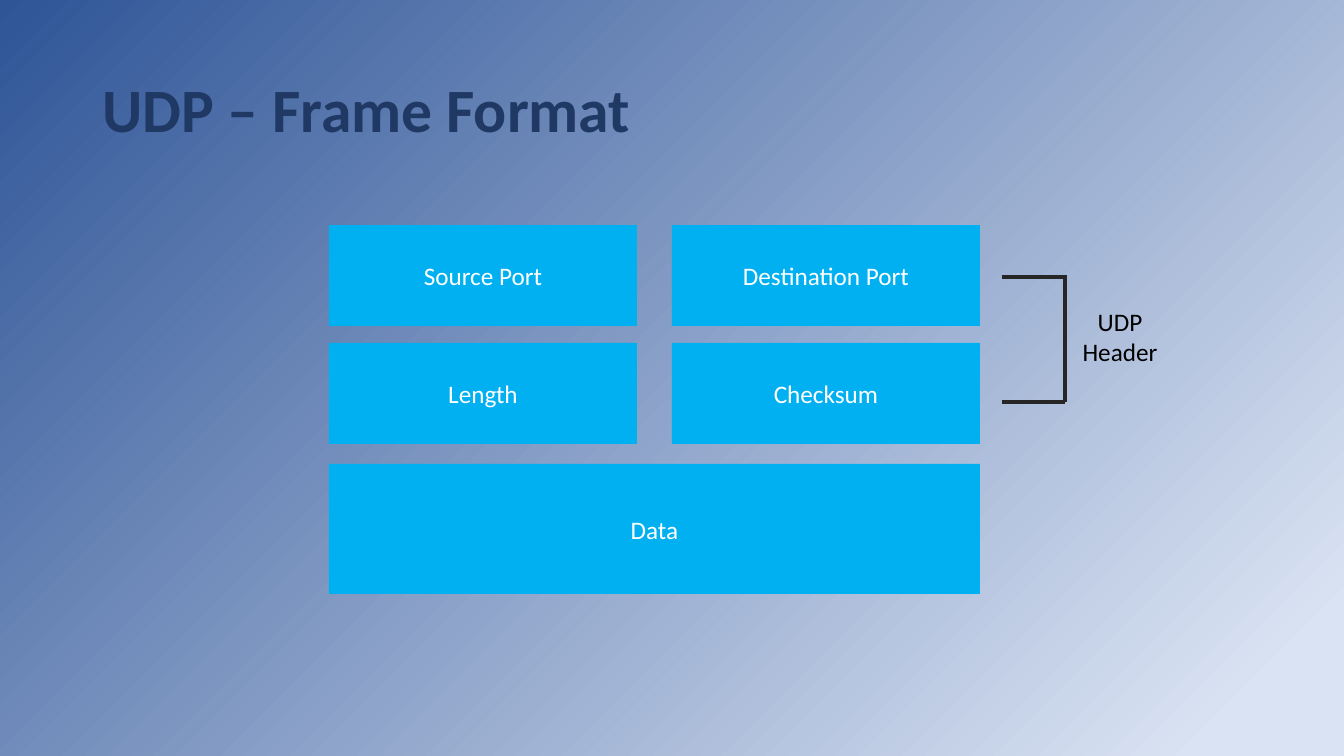
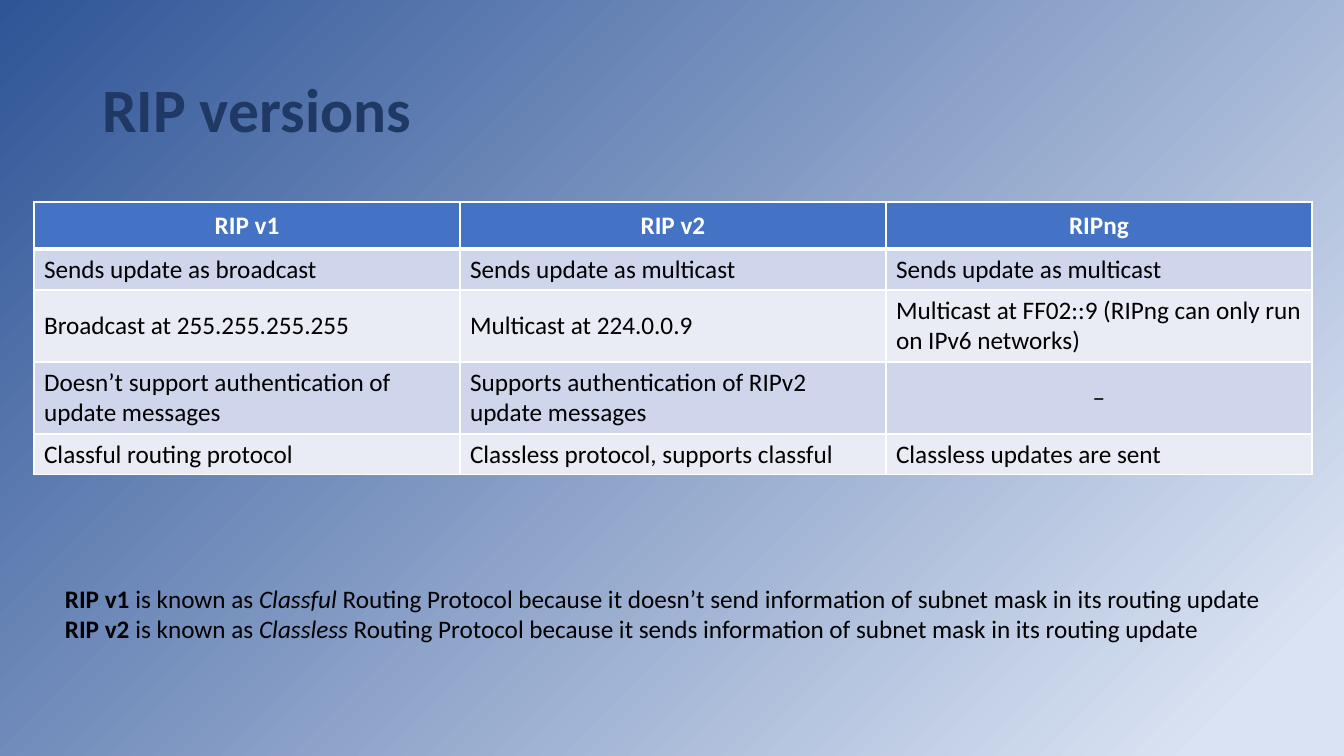
import pptx
import pptx.dml.color
import pptx.enum.shapes
import pptx.enum.text
import pptx.oxml
import pptx.oxml.ns
import pptx.util

PX = 12192000 / 1344
FONT = "Calibri"
COLORS = {
    "gradient_start": "2F5597",
    "gradient_end": "DAE3F3",
    "title": "203864",
    "box": "00B0F0",
    "bracket": "262626",
    "header": "4472C4",
    "odd_row": "CFD5EA",
    "even_row": "E9EBF5",
    "white": "FFFFFF",
    "black": "000000",
}
PP_ALIGN = pptx.enum.text.PP_ALIGN
MIDDLE = pptx.enum.text.MSO_ANCHOR.MIDDLE


def emu(*lengths):
    return [pptx.util.Emu(round(length * PX)) for length in lengths]


def add_text(paragraph, text, color="black", align=PP_ALIGN.LEFT, **formats):
    paragraph.alignment = align
    run = paragraph.add_run()
    run.text = text
    run.font.color.rgb = pptx.dml.color.RGBColor.from_string(COLORS[color])
    values = {"name": FONT, "size": pptx.util.Pt(18), "bold": False} | formats
    for name, value in values.items():
        setattr(run.font, name, value)


presentation = pptx.Presentation()
presentation.slide_width, presentation.slide_height = emu(1344, 756)

# Shared gradient background
background = presentation.slide_master.background.fill
background.gradient()
background.gradient_angle = 315
stops = [(0, "gradient_start"), (0.93, "gradient_end")]
for stop, (position, color) in zip(background.gradient_stops, stops):
    stop.position = position
    stop.color.rgb = pptx.dml.color.RGBColor.from_string(COLORS[color])

# Slides with their titles
slides = []
for title_text in ["UDP – Frame Format", "RIP versions"]:
    slide = presentation.slides.add_slide(presentation.slide_layouts[5])
    title = slide.shapes.title
    title.left, title.top, title.width, title.height = emu(92, 40, 1159, 146)
    title.text_frame.vertical_anchor = MIDDLE
    paragraph = title.text_frame.paragraphs[0]
    paragraph.line_spacing = 0.9
    add_text(paragraph, title_text, "title", size=pptx.util.Pt(44), bold=True)
    slides.append(slide)
frame_slide, versions_slide = slides

# Frame fields: a two-by-two header grid above the data
LEFT, TOP, FIELD_WIDTH, FIELD_HEIGHT = 329, 225, 308, 101
COLUMN_STEP, ROW_STEP = 343, 118
fields = [
    (text, LEFT + column * COLUMN_STEP, TOP + row * ROW_STEP, FIELD_WIDTH, FIELD_HEIGHT)
    for row, names in enumerate([("Source Port", "Destination Port"), ("Length", "Checksum")])
    for column, text in enumerate(names)
]
fields.append(("Data", LEFT, 464, COLUMN_STEP + FIELD_WIDTH, 130))
for text, *place in fields:
    shape = frame_slide.shapes.add_shape(pptx.enum.shapes.MSO_SHAPE.RECTANGLE, *emu(*place))
    shape.shadow.inherit = False
    shape.fill.solid()
    shape.fill.fore_color.rgb = pptx.dml.color.RGBColor.from_string(COLORS["box"])
    shape.line.fill.background()
    shape.text_frame.vertical_anchor = MIDDLE
    add_text(shape.text_frame.paragraphs[0], text, "white", PP_ALIGN.CENTER)

# Bracket beside the header fields
for ends in [(1002, 277, 1065, 277), (1065, 275, 1065, 402), (1002, 402, 1065, 402)]:
    connector = frame_slide.shapes.add_connector(
        pptx.enum.shapes.MSO_CONNECTOR.STRAIGHT, *emu(*ends))
    connector.line.color.rgb = pptx.dml.color.RGBColor.from_string(COLORS["bracket"])
    connector.line.width = pptx.util.Pt(2.25)
    connector._element.spPr.append(pptx.oxml.parse_xml(
        f"<a:effectLst {pptx.oxml.ns.nsdecls('a')}/>"))

# Free text: bracket label and notes on the versions
label = frame_slide.shapes.add_textbox(*emu(1072, 301, 96, 72)).text_frame
notes = versions_slide.shapes.add_textbox(*emu(55, 578, 1237, 72)).text_frame
for text_frame in [label, notes]:
    text_frame.word_wrap = False
    text_frame.auto_size = pptx.enum.text.MSO_AUTO_SIZE.SHAPE_TO_FIT_TEXT
add_text(label.paragraphs[0], "UDP", align=PP_ALIGN.CENTER)
add_text(label.add_paragraph(), "Header", align=PP_ALIGN.CENTER)

note_lines = [
    ("RIP v1", "Classful", "doesn’t send"),
    ("RIP v2", "Classless", "sends"),
]
paragraph = notes.paragraphs[0]
for index, (version, kind, action) in enumerate(note_lines):
    if index:
        paragraph.add_line_break()
    add_text(paragraph, version, bold=True)
    add_text(paragraph, " is known as ")
    add_text(paragraph, kind, italic=True)
    add_text(paragraph, f" Routing Protocol because it {action} "
                        "information of subnet mask in its routing update")

# Table of versions
rows = [
    ("RIP v1", "RIP v2", "RIPng"),
    ("Sends update as broadcast", "Sends update as multicast", "Sends update as multicast"),
    ("Broadcast at 255.255.255.255", "Multicast at 224.0.0.9",
     "Multicast at FF02::9 (RIPng can only run on IPv6 networks)"),
    ("Doesn’t support authentication of update messages",
     "Supports authentication of RIPv2 update messages", "–"),
    ("Classful routing protocol", "Classless protocol, supports classful",
     "Classless updates are sent"),
]
row_heights = [47, 41, 72, 72, 40]
table = versions_slide.shapes.add_table(
    len(rows), 3, *emu(34, 202, 1278, sum(row_heights))).table
for column in table.columns:
    column.width = emu(426)[0]
for row_index, texts in enumerate(rows):
    is_header = row_index == 0
    table.rows[row_index].height = emu(row_heights[row_index])[0]
    fill = "header" if is_header else "odd_row" if row_index % 2 else "even_row"
    for column_index, text in enumerate(texts):
        cell = table.cell(row_index, column_index)
        cell.vertical_anchor = MIDDLE
        if is_header:
            for side in ["left", "top", "right", "bottom"]:
                setattr(cell, f"margin_{side}", emu(8)[0])
        cell.fill.solid()
        cell.fill.fore_color.rgb = pptx.dml.color.RGBColor.from_string(COLORS[fill])
        centered = is_header or text == "–"
        add_text(cell.text_frame.paragraphs[0], text, "white" if is_header else "black",
                 PP_ALIGN.CENTER if centered else PP_ALIGN.LEFT, bold=is_header)

        # White borders, heavier between header and body
        for position, side in enumerate("LRTB"):
            heavy = (row_index, side) in [(0, "B"), (1, "T")]
            width = pptx.util.Pt(3 if heavy else 1)
            cell._tc.get_or_add_tcPr().insert(position, pptx.oxml.parse_xml(
                f'<a:ln{side} {pptx.oxml.ns.nsdecls("a")} w="{width}"><a:solidFill>'
                f'<a:srgbClr val="{COLORS["white"]}"/></a:solidFill></a:ln{side}>'))

presentation.save("out.pptx")
